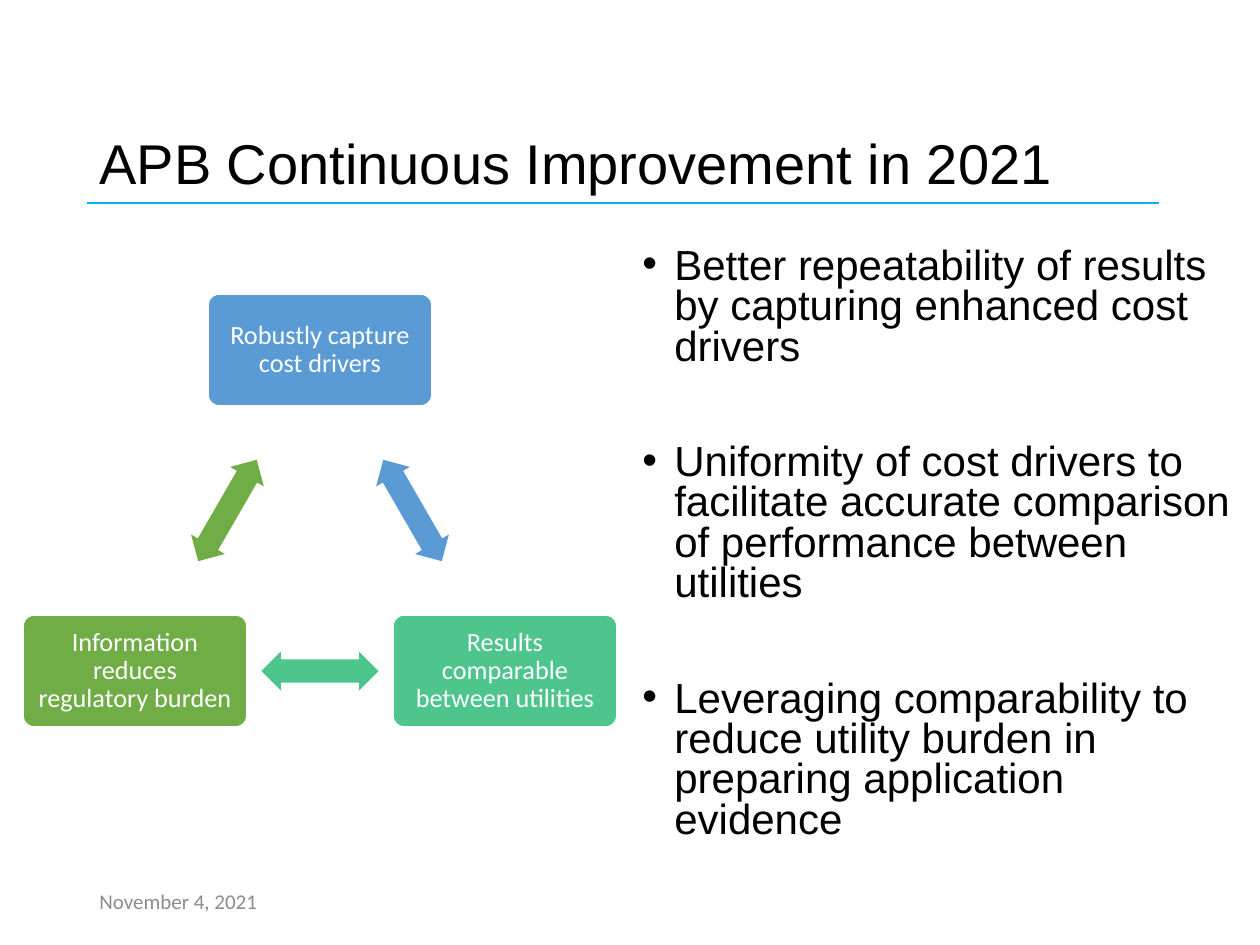
from pptx import Presentation
from pptx.dml.color import RGBColor as RGB
from pptx.enum.shapes import MSO_CONNECTOR as LINE, MSO_SHAPE as SHAPE
from pptx.enum.text import MSO_ANCHOR as ANCHOR, PP_ALIGN as ALIGN
from pptx.oxml.ns import qn
from pptx.util import Emu, Pt
from lxml import etree

BLACK = RGB(0x00, 0x00, 0x00)
WHITE = RGB(0xFF, 0xFF, 0xFF)
GRAY = RGB(0x8C, 0x8C, 0x8C)
CYAN = RGB(0x00, 0xB0, 0xF0)
BLUE = RGB(0x5B, 0x9B, 0xD5)
TEAL = RGB(0x4D, 0xC5, 0x8D)
GREEN = RGB(0x70, 0xAD, 0x47)


def px(n):
    return Emu(round(n * 914400 / 126))


def style(para, name, size, color):
    font = para.font
    font.name, font.size = name, Pt(size)
    font.color.rgb = color


prs = Presentation()
prs.slide_width, prs.slide_height = px(1260), px(945)
slide = prs.slides.add_slide(prs.slide_layouts[6])
shapes = slide.shapes

# Title rule
rule = shapes.add_connector(LINE.STRAIGHT, px(87), px(203), px(1159), px(203))
rule.line.color.rgb = CYAN
rule.line.width = Pt(1.5)
etree.SubElement(rule._element.spPr, qn("a:effectLst"))

# Cycle: three boxes, each with an arrow halfway to the next
nodes = [
    ("Robustly capture cost drivers", 320, 350, BLUE, 60),
    ("Results comparable between utilities", 505, 671, TEAL, 180),
    ("Information reduces regulatory burden", 135, 671, GREEN, 300),
]
box_w, box_h = 224, 112
arr_w, arr_h = 117, 39
for i, (text, x, y, color, turn) in enumerate(nodes):
    box = shapes.add_shape(SHAPE.ROUNDED_RECTANGLE, px(x - box_w / 2),
                           px(y - box_h / 2), px(box_w), px(box_h))
    box.adjustments[0] = 0.1
    box.line.color.rgb = WHITE
    box.line.width = Pt(1)
    frame = box.text_frame
    frame.word_wrap = True
    frame.vertical_anchor = ANCHOR.MIDDLE
    frame.margin_left = frame.margin_right = px(10)
    frame.margin_top = frame.margin_bottom = px(10)
    para = frame.paragraphs[0]
    para.text = text
    para.alignment = ALIGN.CENTER
    para.line_spacing = 0.9
    style(para, "Calibri", 15, WHITE)

    next_x, next_y = nodes[(i + 1) % len(nodes)][1:3]
    mid_x, mid_y = (x + next_x) / 2, (y + next_y) / 2
    arrow = shapes.add_shape(SHAPE.LEFT_RIGHT_ARROW, px(mid_x - arr_w / 2),
                             px(mid_y - arr_h / 2), px(arr_w), px(arr_h))
    arrow.adjustments[0] = 0.6
    arrow.adjustments[1] = 0.5
    arrow.rotation = turn
    arrow.line.fill.background()
    for part in (box, arrow):
        part.shadow.inherit = False
        part.fill.solid()
        part.fill.fore_color.rgb = color

# Date and title
labels = [
    ("November 4, 2021", (87, 876, 284, 50), ANCHOR.MIDDLE, "Calibri", 12, GRAY, 1.0),
    ("APB Continuous Improvement in 2021", (87, 20, 1086, 183), ANCHOR.BOTTOM,
     "Arial", 32, BLACK, 0.9),
]
for text, area, anchor, name, size, color, space in labels:
    frame = shapes.add_textbox(*map(px, area)).text_frame
    frame.word_wrap = True
    frame.vertical_anchor = anchor
    para = frame.paragraphs[0]
    para.text = text
    para.line_spacing = space
    style(para, name, size, color)

# Bullet list
points = [
    "Better repeatability of results by capturing enhanced cost drivers",
    "Uniformity of cost drivers to facilitate accurate comparison of performance between utilities",
    "Leveraging comparability to reduce utility burden in preparing application evidence",
]
frame = shapes.add_textbox(px(630), px(242), px(620), px(659)).text_frame
frame.word_wrap = True
for i, text in enumerate(points):
    para = frame.add_paragraph() if i else frame.paragraphs[0]
    para.text = text
    para.line_spacing = 0.8
    if i:
        para.space_before = Pt(43)
    props = para._p.get_or_add_pPr()
    props.set("marL", str(px(32)))
    props.set("indent", str(-px(32)))
    etree.SubElement(props, qn("a:buFont"), typeface="Arial")
    etree.SubElement(props, qn("a:buChar"), char="•")
    style(para, "Arial", 24, BLACK)

prs.save("out.pptx")
